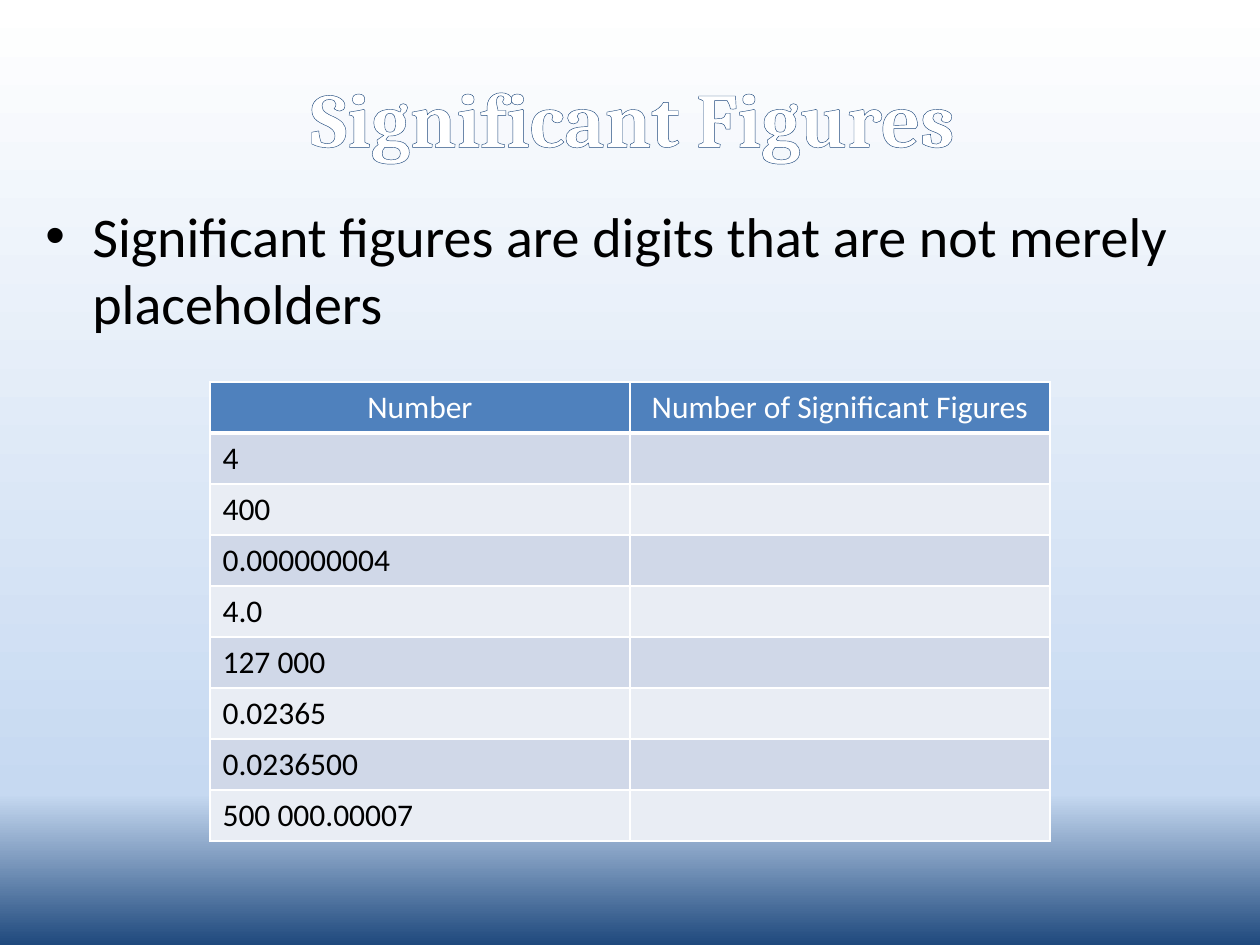
from lxml import etree
from pptx import Presentation
from pptx.dml.color import RGBColor
from pptx.enum.text import MSO_ANCHOR, PP_ALIGN
from pptx.oxml import parse_xml
from pptx.oxml.ns import nsdecls, qn
from pptx.util import Emu, Pt

CENTER, LEFT = PP_ALIGN.CENTER, PP_ALIGN.LEFT
TOP, MIDDLE = MSO_ANCHOR.TOP, MSO_ANCHOR.MIDDLE
EMU_PER_PX = 914400 / 126
WHITE, BLACK, NAVY = "FFFFFF", "000000", "1F497D"
HEADER_BLUE, BANDS = "4F81BD", ("D0D8E8", "E9EDF4")

HEADINGS = ("Number", "Number of Significant Figures")
NUMBERS = ("4", "400", "0.000000004", "4.0", "127 000",
           "0.02365", "0.0236500", "500 000.00007")


def px(length):
    return Emu(round(length * EMU_PER_PX))


def color(value):
    return RGBColor.from_string(value)


def line_xml(tag, hex_color, points):
    return parse_xml(
        f'<a:{tag} {nsdecls("a")} w="{Pt(points)}"><a:solidFill>'
        f'<a:srgbClr val="{hex_color}"/></a:solidFill></a:{tag}>')


class SlideBuilder:
    title_style = {"name": "Cambria", "size": Pt(44), "bold": True}
    body_style = {"name": "Calibri", "size": Pt(32)}
    cell_style = {"name": "Calibri", "size": Pt(18), "bold": False}

    def __init__(self, slide):
        self.slide = slide

    def background(self, stops, angle):
        fill = self.slide.background.fill
        fill.gradient()
        fill.gradient_angle = angle
        stop_list = self.slide.background._cSld.find(".//" + qn("a:gsLst"))
        for stop in list(stop_list):
            stop_list.remove(stop)
        for percent, hex_color in stops:
            stop = etree.SubElement(stop_list, qn("a:gs"), pos=str(percent * 1000))
            etree.SubElement(stop, qn("a:srgbClr"), val=hex_color)

    def add_words(self, paragraph, words, style, hex_color, align=LEFT):
        paragraph.alignment = align
        run = paragraph.add_run()
        run.text = words
        for attribute, value in style.items():
            setattr(run.font, attribute, value)
        run.font.color.rgb = color(hex_color)
        return run

    def text_frame(self, left, top, width, height, anchor):
        frame = self.slide.shapes.add_textbox(
            px(left), px(top), px(width), px(height)).text_frame
        frame.word_wrap = True
        frame.vertical_anchor = anchor
        return frame

    def title(self, words, *box):
        frame = self.text_frame(*box, MIDDLE)
        run = self.add_words(frame.paragraphs[0], words, self.title_style, WHITE, CENTER)
        run.font._element.insert(0, line_xml("ln", NAVY, 2.48))

    def bullet(self, words, indent, *box):
        paragraph = self.text_frame(*box, TOP).paragraphs[0]
        self.add_words(paragraph, words, self.body_style, BLACK)
        paragraph.space_before = Pt(6.4)
        properties = paragraph._p.get_or_add_pPr()
        properties.set("marL", str(px(indent)))
        properties.set("indent", str(-px(indent)))
        etree.SubElement(properties, qn("a:buFont"), typeface="Arial")
        etree.SubElement(properties, qn("a:buChar"), char="•")

    def cell(self, cell, words, fill, hex_color, align, bottom_width):
        borders = {"lnL": 1, "lnR": 1, "lnT": 1, "lnB": bottom_width}
        properties = cell._tc.get_or_add_tcPr()
        for side, width in borders.items():
            properties.append(line_xml(side, WHITE, width))
        cell.fill.solid()
        cell.fill.fore_color.rgb = color(fill)
        if words:
            self.add_words(cell.text_frame.paragraphs[0], words,
                           self.cell_style, hex_color, align)

    def table(self, headings, rows, left, top, width, row_height):
        row_count = len(rows) + 1
        table = self.slide.shapes.add_table(
            row_count, len(headings), px(left), px(top),
            px(width), px(row_height * row_count)).table
        for column, heading in enumerate(headings):
            self.cell(table.cell(0, column), heading, HEADER_BLUE, WHITE, CENTER, 3)
        for index, row in enumerate(rows):
            for column, words in enumerate(row):
                self.cell(table.cell(index + 1, column), words,
                          BANDS[index % 2], BLACK, LEFT, 1)


def main():
    deck = Presentation()
    deck.slide_width, deck.slide_height = px(1260), px(945)
    builder = SlideBuilder(deck.slides.add_slide(deck.slide_layouts[6]))
    builder.background(((0, NAVY), (16, "C6D9F1"), (100, WHITE)), 90)
    builder.title("Significant Figures", 33, 38, 1200, 157)
    builder.bullet("Significant figures are digits that are not merely placeholders",
                   47, 33, 195, 1200, 720)
    builder.table(HEADINGS, [(number, "") for number in NUMBERS],
                  210, 382, 840, 51)
    deck.save("out.pptx")


if __name__ == "__main__":
    main()
